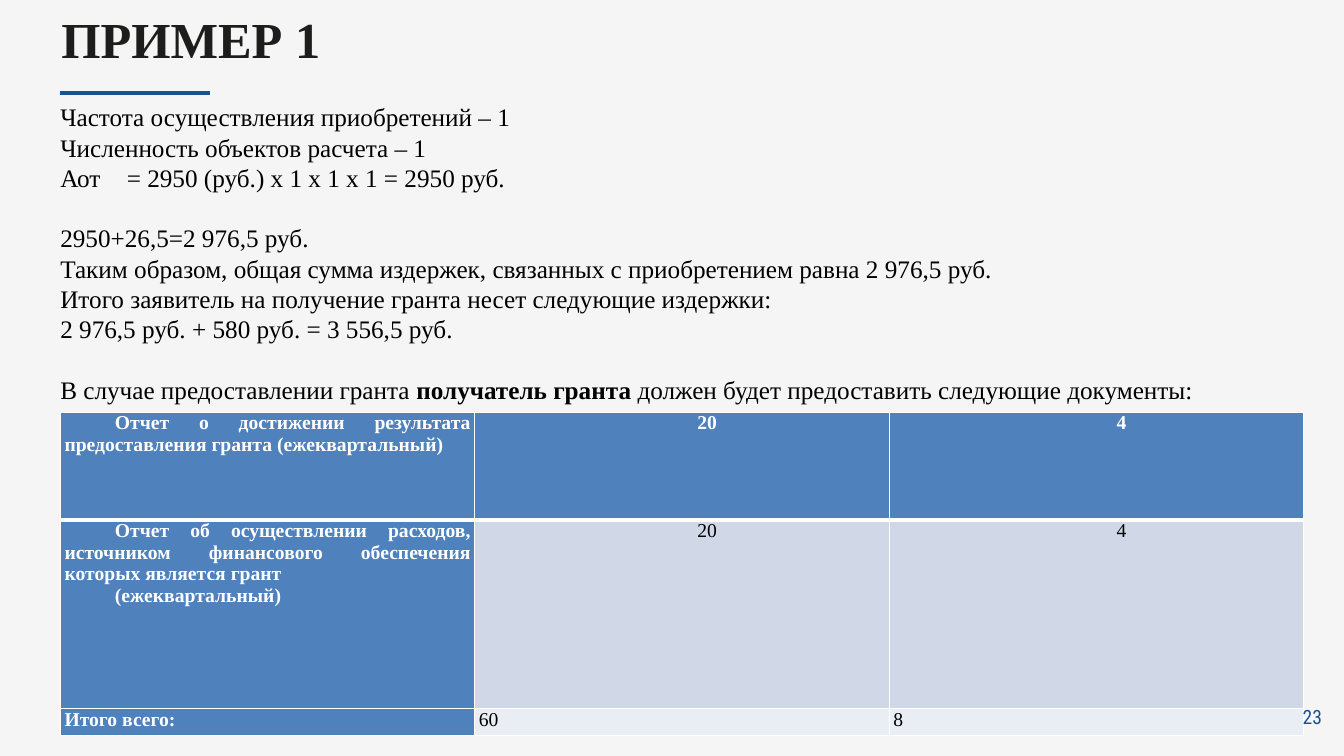
from lxml import etree
from pptx import Presentation
from pptx import util as u
from pptx.dml.color import RGBColor
from pptx.enum import shapes, text
from pptx.oxml import ns

PAPER = RGBColor(0xF5, 0xF5, 0xF5)
ACCENT = RGBColor(0x18, 0x52, 0x92)
INK = RGBColor(0x1D, 0x1D, 0x1B)
BLACK = RGBColor(0, 0, 0)
WHITE = RGBColor(0xFF, 0xFF, 0xFF)
HEADER = RGBColor(0x4F, 0x81, 0xBD)
BAND_DARK = RGBColor(0xD0, 0xD8, 0xE8)
BAND_LIGHT = RGBColor(0xE9, 0xED, 0xF4)
SERIF = "Times New Roman"
CONDENSED = "Roboto Condensed"
JUSTIFY, CENTER = text.PP_ALIGN.JUSTIFY, text.PP_ALIGN.CENTER

TITLE = "ПРИМЕР 1"
PAGE = "23"
# Each block is a list of lines; a line is a list of (wording, bold)
CALCULATION = [
    [
        [("Частота осуществления приобретений – 1", False)],
        [("Численность объектов расчета – 1", False)],
        [("Аот\t= 2950 (руб.) х 1 х 1 х 1 = 2950 руб.", False)],
    ],
    [
        [("2950+26,5=2 976,5 руб.", False)],
        [("Таким образом, общая сумма издержек, связанных с приобретением равна 2 976,5 руб.", False)],
        [("Итого заявитель на получение гранта несет следующие издержки: ", False)],
        [("2 976,5 руб. + 580 руб. = 3 556,5 руб.", False)],
    ],
    [
        [("В случае предоставлении гранта ", False),
         ("получатель гранта ", True),
         ("должен будет предоставить следующие документы:", False)],
    ],
]
# Row height, first-line indent, alignment of figures, fill of figures, cells
REPORTS = [
    (1.07, 0.5, CENTER, HEADER,
     [["Отчет о достижении результата предоставления гранта (ежеквартальный)"], ["20"], ["4"]]),
    (1.87, 0.5, CENTER, BAND_DARK,
     [["Отчет об осуществлении расходов, источником финансового обеспечения которых является грант",
       "(ежеквартальный)"], ["20"], ["4"]]),
    (0.27, 0, JUSTIFY, BAND_LIGHT, [["Итого всего: "], ["60"], ["8"]]),
]

LEFT = 0.6
COLUMN = 4.11
LINE_PITCH = u.Pt(21.6)
FORMULA_TAB = 0.66


def add_run(paragraph, wording, size, color, bold=False, face=SERIF):
    run = paragraph.add_run()
    run.text = wording
    run.font.size = u.Pt(size)
    run.font.name = face
    run.font.bold = bold
    run.font.color.rgb = color
    return run


def add_frame(slide, box, insets=(0, 0, 0, 0)):
    frame = slide.shapes.add_textbox(*map(u.Inches, box)).text_frame
    frame.word_wrap = True
    (frame.margin_left, frame.margin_top,
     frame.margin_right, frame.margin_bottom) = map(u.Inches, insets)
    return frame


def next_paragraph(frame, index):
    return frame.add_paragraph() if index else frame.paragraphs[0]


def add_tab_stop(paragraph, position):
    stops = etree.SubElement(paragraph._p.get_or_add_pPr(), ns.qn("a:tabLst"))
    etree.SubElement(stops, ns.qn("a:tab"), pos=str(u.Inches(position)), algn="l")


def set_borders(cell, widths):
    """Draw white cell edges; widths maps lnL, lnR, lnT, lnB to points."""
    properties = cell._tc.get_or_add_tcPr()
    for position, (edge, width) in enumerate(widths.items()):
        line = etree.Element(ns.qn("a:" + edge), w=str(u.Pt(width)))
        fill = etree.SubElement(line, ns.qn("a:solidFill"))
        etree.SubElement(fill, ns.qn("a:srgbClr"), val=str(WHITE))
        properties.insert(position, line)


def add_heading(slide):
    title = add_frame(slide, (LEFT, 0.29, 3.57, 0.45), (0.01, 0.03, 0, 0)).paragraphs[0]
    title.line_spacing = u.Pt(25.6)
    add_run(title, TITLE, 36, INK, bold=True)

    rule = slide.shapes.add_connector(
        shapes.MSO_CONNECTOR.STRAIGHT, *map(u.Inches, (LEFT, 0.92, LEFT + 1.48, 0.92)))
    rule.line.color.rgb = ACCENT
    rule.line.width = u.Pt(3)
    etree.SubElement(rule._element.spPr, ns.qn("a:effectLst"))


def add_calculation(slide):
    frame = add_frame(slide, (0.5, 0.96, 12.67, 3.13), (0.1, 0.05, 0.1, 0.05))
    count = 0
    for block in CALCULATION:
        for line in block:
            paragraph = next_paragraph(frame, count)
            paragraph.alignment = JUSTIFY
            paragraph.line_spacing = LINE_PITCH
            if count and line is block[0]:
                paragraph.space_before = LINE_PITCH
            for wording, bold in line:
                add_run(paragraph, wording, 18, BLACK, bold)
                if "\t" in wording:
                    add_tab_stop(paragraph, FORMULA_TAB)
            count += 1


def add_reports(slide):
    heights = [report[0] for report in REPORTS]
    columns = len(REPORTS[0][-1])
    table = slide.shapes.add_table(
        len(REPORTS), columns,
        *map(u.Inches, (LEFT, 4.09, COLUMN * columns, sum(heights)))).table
    for column in table.columns:
        column.width = u.Inches(COLUMN)

    for r, (height, indent, figure_align, figure_fill, cells) in enumerate(REPORTS):
        table.rows[r].height = u.Inches(height)
        for c, lines in enumerate(cells):
            cell = table.cell(r, c)
            cell.margin_left = cell.margin_right = u.Inches(0.04)
            cell.margin_top = cell.margin_bottom = 0
            cell.fill.solid()
            cell.fill.fore_color.rgb = HEADER if c == 0 else figure_fill
            set_borders(cell, {"lnL": 1, "lnR": 1,
                               "lnT": 3 if r == 1 else 1, "lnB": 3 if r == 0 else 1})
            heading = r == 0 or c == 0
            for i, wording in enumerate(lines):
                paragraph = next_paragraph(cell.text_frame, i)
                paragraph.alignment = figure_align if c else JUSTIFY
                paragraph._p.get_or_add_pPr().set("indent", str(u.Inches(indent)))
                add_run(paragraph, wording, 14, WHITE if heading else BLACK, heading)


def add_page_number(slide):
    number = add_frame(slide, (12.88, 7, 0.37, 0.22), (0.04, 0, 0, 0)).paragraphs[0]
    number.line_spacing = u.Pt(16.4)
    add_run(number, PAGE, 14, ACCENT, face=CONDENSED)


def main():
    deck = Presentation()
    deck.slide_width, deck.slide_height = u.Inches(13.33), u.Inches(7.5)
    slide = deck.slides.add_slide(deck.slide_layouts[6])
    slide.background.fill.solid()
    slide.background.fill.fore_color.rgb = PAPER
    add_heading(slide)
    add_calculation(slide)
    add_reports(slide)
    add_page_number(slide)
    deck.save("out.pptx")


if __name__ == "__main__":
    main()
